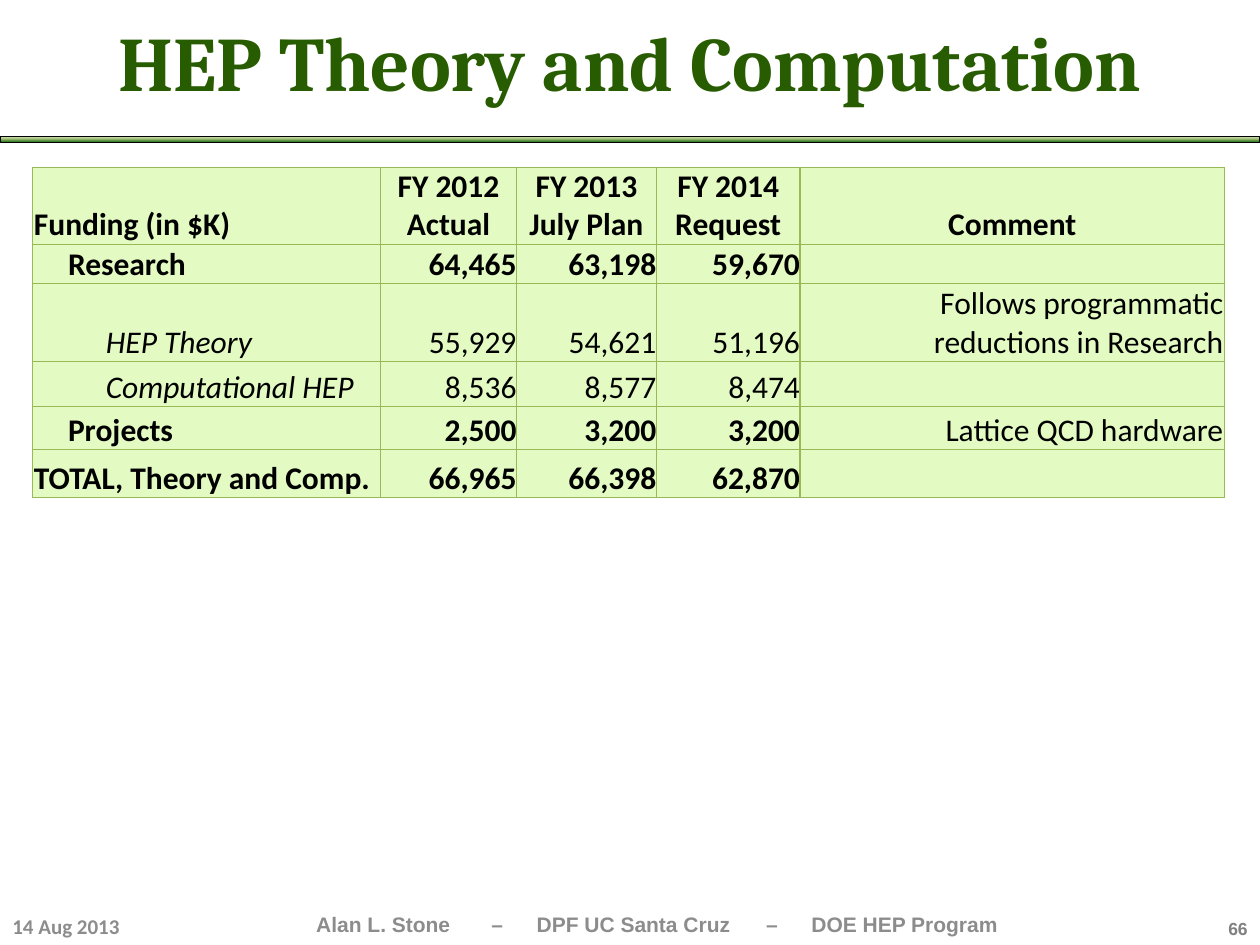
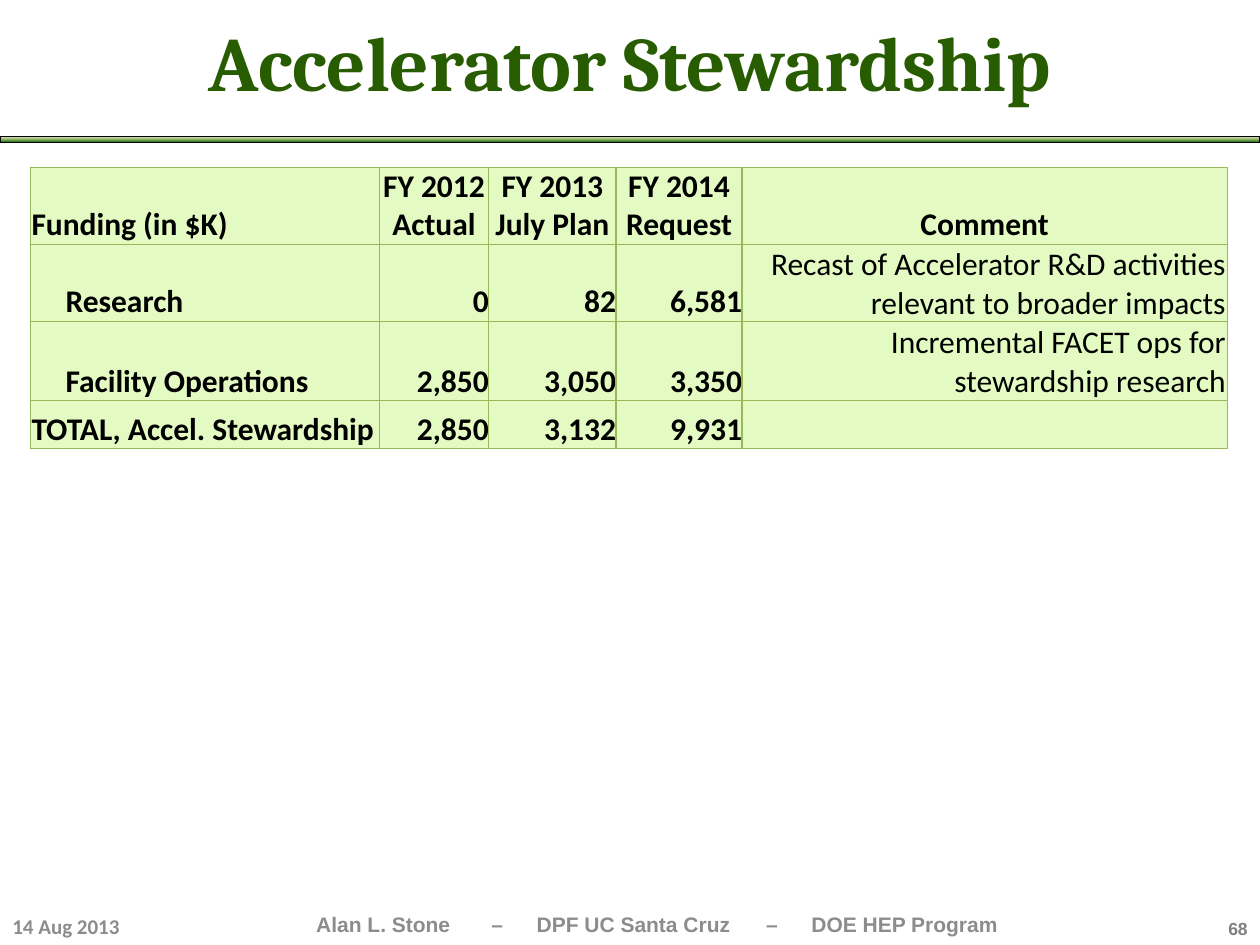
"""Build two budget slides, each with a funding table."""
import copy

import lxml.etree
import pptx
import pptx.dml.color
import pptx.enum.shapes
import pptx.enum.text
import pptx.oxml.ns
import pptx.util

Inches = pptx.util.Inches
Pt = pptx.util.Pt
qn = pptx.oxml.ns.qn
rgb = pptx.dml.color.RGBColor.from_string
align = pptx.enum.text.PP_ALIGN
anchor = pptx.enum.text.MSO_ANCHOR


class Theme:
    title = ("Cambria", 44, "285C00")
    body = ("Calibri", 18, "000000")
    date = ("Calibri", 12, "8C8C8C")
    foot = ("Arial", 12, "8C8C8C")
    page = ("Arial", 10, "808080")
    cell = "E3FBC2"
    edge = "98B955"
    line = "000000"
    bar = [(0, "DDEBCF"), (0.5, "9CB86E"), (1, "156B13")]


def style(para, look, side, bold=True, italic=False):
    para.alignment = side
    for run in para.runs:
        run.font.name = look[0]
        run.font.size = Pt(look[1])
        run.font.color.rgb = rgb(look[2])
        run.font.bold = bold
        run.font.italic = italic


def label(slide, box, text, look, side, hold=anchor.MIDDLE):
    frame = slide.shapes.add_textbox(*map(Inches, box)).text_frame
    frame.word_wrap = True
    frame.vertical_anchor = hold
    frame.text = text
    style(frame.paragraphs[0], look, side)
    return frame


head = ("head", "Funding (in $K)", "FY 2012 Actual", "FY 2013 July Plan",
        "FY 2014 Request", "Comment")
pages = [
    {
        "title": "HEP Theory and Computation", "page": "66", "left": 0.26,
        "cols": [2.76, 1.08, 1.11, 1.14, 3.37],
        "rows": [0.61, 0.31, 0.62, 0.36, 0.34, 0.38],
        "cells": [
            head,
            ("part", "Research", "64,465", "63,198", "59,670", ""),
            ("sub", "HEP Theory", "55,929", "54,621", "51,196",
             "Follows programmatic reductions in Research"),
            ("sub", "Computational HEP", "8,536", "8,577", "8,474", ""),
            ("part", "Projects", "2,500", "3,200", "3,200",
             "Lattice QCD hardware"),
            ("total", "TOTAL, Theory and Comp.", "66,965", "66,398",
             "62,870", ""),
        ],
    },
    {
        "title": "Accelerator Stewardship", "page": "68", "left": 0.24,
        "cols": [2.77, 0.87, 1.01, 1, 3.85],
        "rows": [0.61, 0.61, 0.63, 0.38],
        "cells": [
            head,
            ("part", "Research", "0", "82", "6,581",
             "Recast of Accelerator R&D activities relevant to broader impacts"),
            ("part", "Facility Operations", "2,850", "3,050", "3,350",
             "Incremental FACET ops for stewardship research"),
            ("total", "TOTAL, Accel. Stewardship", "2,850", "3,132",
             "9,931", ""),
        ],
    },
]
foot = "Alan L. Stone\t–\tDPF UC Santa Cruz\t–\tDOE HEP Program"
tabs = [1.39, 1.75, 3.57, 3.93]

deck = pptx.Presentation()
deck.slide_width = Inches(10)
deck.slide_height = Inches(7.5)

for page in pages:
    slide = deck.slides.add_slide(deck.slide_layouts[6])

    bar = slide.shapes.add_shape(
        pptx.enum.shapes.MSO_SHAPE.RECTANGLE,
        Inches(0), Inches(1.08), Inches(10), Inches(0.05))
    bar.shadow.inherit = False
    bar.line.color.rgb = rgb(Theme.line)
    bar.line.width = Pt(0.5)
    bar.fill.gradient()
    bar.fill.gradient_angle = 270
    stops = next(bar._element.iter(qn("a:gsLst")))
    stops.insert(1, copy.deepcopy(stops[0]))
    for stop, (place, color) in zip(bar.fill.gradient_stops, Theme.bar):
        stop.position = place
        stop.color.rgb = rgb(color)

    label(slide, (9.59, 7.24, 0.41, 0.26), page["page"], Theme.page,
          align.RIGHT, anchor.TOP)
    frame = label(slide, (2.32, 7.17, 5.84, 0.33), foot, Theme.foot, align.LEFT)
    frame.margin_left = Inches(0.19)
    props = frame.paragraphs[0]._p.get_or_add_pPr()
    stops = lxml.etree.SubElement(props, qn("a:tabLst"))
    for tab in tabs:
        lxml.etree.SubElement(stops, qn("a:tab"), pos=str(Inches(tab)), algn="l")
    label(slide, (0, 0.19, 10, 0.58), page["title"], Theme.title, align.CENTER)

    cols, rows = page["cols"], page["rows"]
    table = slide.shapes.add_table(
        len(rows), len(cols), Inches(page["left"]), Inches(1.33),
        Inches(sum(cols)), Inches(sum(rows))).table
    table.first_row = False
    table.horz_banding = False
    for col, width in zip(table.columns, cols):
        col.width = Inches(width)
    for row, height, (kind, *texts) in zip(table.rows, rows, page["cells"]):
        row.height = Inches(height)
        for spot, (cell, text) in enumerate(zip(row.cells, texts)):
            first, last = spot == 0, spot == len(cols) - 1
            pad = 0.01 if first or last else 0
            inset = first and kind in ("part", "sub")
            cell.margin_left = Inches(0.28 if inset else pad)
            cell.margin_right = cell.margin_top = Inches(pad)
            cell.margin_bottom = 0
            cell.vertical_anchor = anchor.BOTTOM
            cell.text = text
            para = cell.text_frame.paragraphs[0]
            side = (align.LEFT if first else
                    align.CENTER if kind == "head" else align.RIGHT)
            bold = kind == "head" or (kind != "sub" and not last)
            style(para, Theme.body, side, bold, first and kind == "sub")
            if first and kind == "sub":
                para.level = 1
                para._p.get_or_add_pPr().set("marL", str(Inches(0.3)))
            cell.fill.solid()
            cell.fill.fore_color.rgb = rgb(Theme.cell)
            props = cell._tc.get_or_add_tcPr()
            for order, name in enumerate(("a:lnL", "a:lnR", "a:lnT", "a:lnB")):
                edge = lxml.etree.Element(qn(name), w=str(Pt(0.75)))
                fill = lxml.etree.SubElement(edge, qn("a:solidFill"))
                lxml.etree.SubElement(fill, qn("a:srgbClr"), val=Theme.edge)
                props.insert(order, edge)

    label(slide, (0, 7.2, 1.07, 0.3), "14 Aug 2013", Theme.date, align.LEFT)

deck.save("out.pptx")
